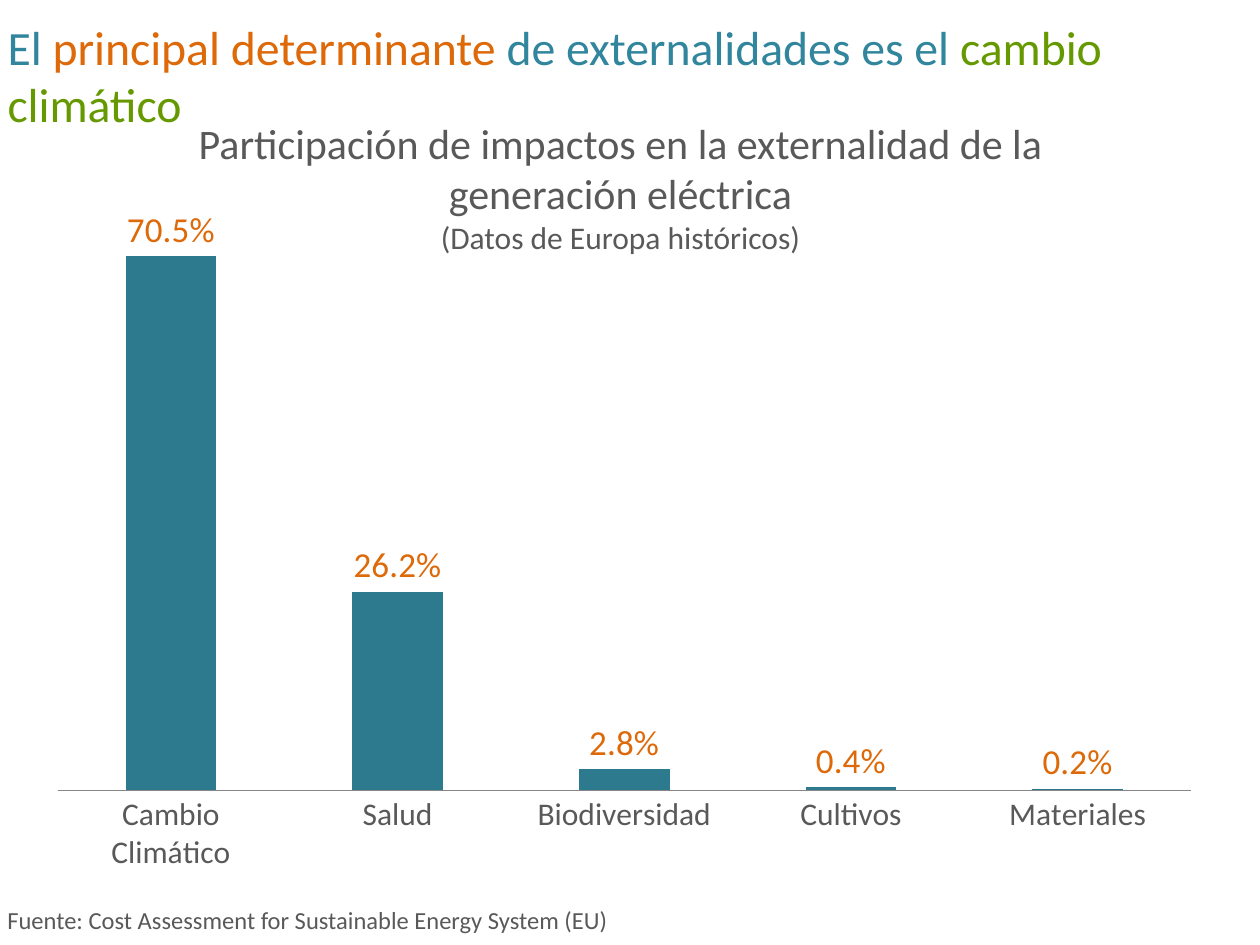
from lxml import etree
from pptx import Presentation
from pptx.chart.data import CategoryChartData
from pptx.dml.color import RGBColor
from pptx.enum.chart import XL_CHART_TYPE, XL_LABEL_POSITION, XL_TICK_MARK
from pptx.enum.text import MSO_ANCHOR, PP_ALIGN
from pptx.oxml.ns import qn
from pptx.util import Inches, Pt

COLUMN = XL_CHART_TYPE.COLUMN_CLUSTERED
OUTSIDE = XL_LABEL_POSITION.OUTSIDE_END
NO_TICK = XL_TICK_MARK.NONE
MIDDLE, TOP = MSO_ANCHOR.MIDDLE, MSO_ANCHOR.TOP
LEFT, CENTER = PP_ALIGN.LEFT, PP_ALIGN.CENTER

FACE = "Calibri"
WIDTH, HEIGHT = Inches(10), Inches(7.5)
COLORS = {"blue": "31859C", "orange": "DD6909", "green": "669900",
          "gray": "595959", "bar": "2D7A8F", "axis": "868686"}
SHARES = {"Cambio Climático": 0.705, "Salud": 0.262, "Biodiversidad": 0.028,
          "Cultivos": 0.004, "Materiales": 0.002}


def color(name):
    """Return the named colour."""
    return RGBColor.from_string(COLORS[name])


def scale(left, top, width, height):
    """Turn inches into whole slide lengths."""
    return [Inches(side) for side in (left, top, width, height)]


def style(font, size, name=None):
    """Set the face, size and colour of a font."""
    font.name, font.size = FACE, Pt(size)
    if name:
        font.color.rgb = color(name)


def add_title(slide, box):
    """Place the headline with its coloured words."""
    title = slide.shapes.title
    title.left, title.top, title.width, title.height = box
    frame = title.text_frame
    frame.word_wrap, frame.vertical_anchor = True, MIDDLE
    line = frame.paragraphs[0]
    line.alignment = LEFT
    style(line.font, 27.3)
    for text, name in (("El ", "blue"), ("principal determinante", "orange"),
                       (" de externalidades es el ", "blue"),
                       ("cambio climático", "green")):
        run = line.add_run()
        run.text = text
        run.font.color.rgb = color(name)


def add_text(slide, box, lines, align):
    """Place gray lines of text, each with its size."""
    frame = slide.shapes.add_textbox(*box).text_frame
    frame.word_wrap, frame.vertical_anchor = True, TOP
    for row, (text, size) in enumerate(lines):
        line = frame.add_paragraph() if row else frame.paragraphs[0]
        line.text, line.alignment = text, align
        style(line.font, size, "gray")


def set_plot(chart, **shares):
    """Fix the inner plot area as shares of the chart."""
    area = chart.plots[0]._element.getparent()
    for old in area.findall(qn("c:layout")):
        area.remove(old)
    layout = etree.Element(qn("c:layout"))
    area.insert(0, layout)
    manual = etree.SubElement(layout, qn("c:manualLayout"))
    parts = {"layoutTarget": "inner", "xMode": "edge", "yMode": "edge", **shares}
    for key, value in parts.items():
        etree.SubElement(manual, qn(f"c:{key}")).set("val", str(value))


def add_bars(slide, box):
    """Place the column chart of impact shares."""
    data = CategoryChartData(number_format="0.0%")
    data.categories = list(SHARES)
    data.add_series("Series 1", list(SHARES.values()))
    chart = slide.shapes.add_chart(COLUMN, *box, data).chart
    chart.has_legend = chart.has_title = False
    style(chart.font, 10)

    plot = chart.plots[0]
    plot.gap_width, plot.overlap, plot.vary_by_categories = 150, -25, False
    fill = plot.series[0].format.fill
    fill.solid()
    fill.fore_color.rgb = color("bar")
    plot.has_data_labels = True
    labels = plot.data_labels
    labels.show_value, labels.position = True, OUTSIDE
    labels.number_format, labels.number_format_is_linked = "0.0%", False
    style(labels.font, 20, "orange")

    base = chart.category_axis
    base.major_tick_mark = base.minor_tick_mark = NO_TICK
    base.format.line.color.rgb = color("axis")
    base.format.line.width = Pt(0.75)
    style(base.tick_labels.font, 18, "gray")

    value = chart.value_axis
    value.minimum_scale, value.maximum_scale = 0, 0.8
    value.has_major_gridlines = value.visible = False
    value.tick_labels.number_format = "0.0%"
    value.tick_labels.number_format_is_linked = False
    set_plot(chart, x=0.02, y=0.02, w=0.96, h=0.85)


def main():
    """Build and save the slide."""
    deck = Presentation()
    deck.slide_width, deck.slide_height = WIDTH, HEIGHT
    slide = deck.slides.add_slide(deck.slide_layouts[5])
    add_text(slide, scale(-0.04, 7.13, 5.91, 0.34),
             [("Fuente: Cost Assessment for Sustainable Energy System (EU)", 14)],
             LEFT)
    add_title(slide, scale(-0.04, 0.05, 10, 1.09))
    add_text(slide, scale(1.02, 0.88, 7.81, 1.21),
             [("Participación de impactos en la externalidad de la "
               "generación eléctrica", 24),
              ("(Datos de Europa históricos)", 18)], CENTER)
    add_bars(slide, scale(0.27, 1.35, 9.37, 5.66))
    deck.save("out.pptx")


if __name__ == "__main__":
    main()
